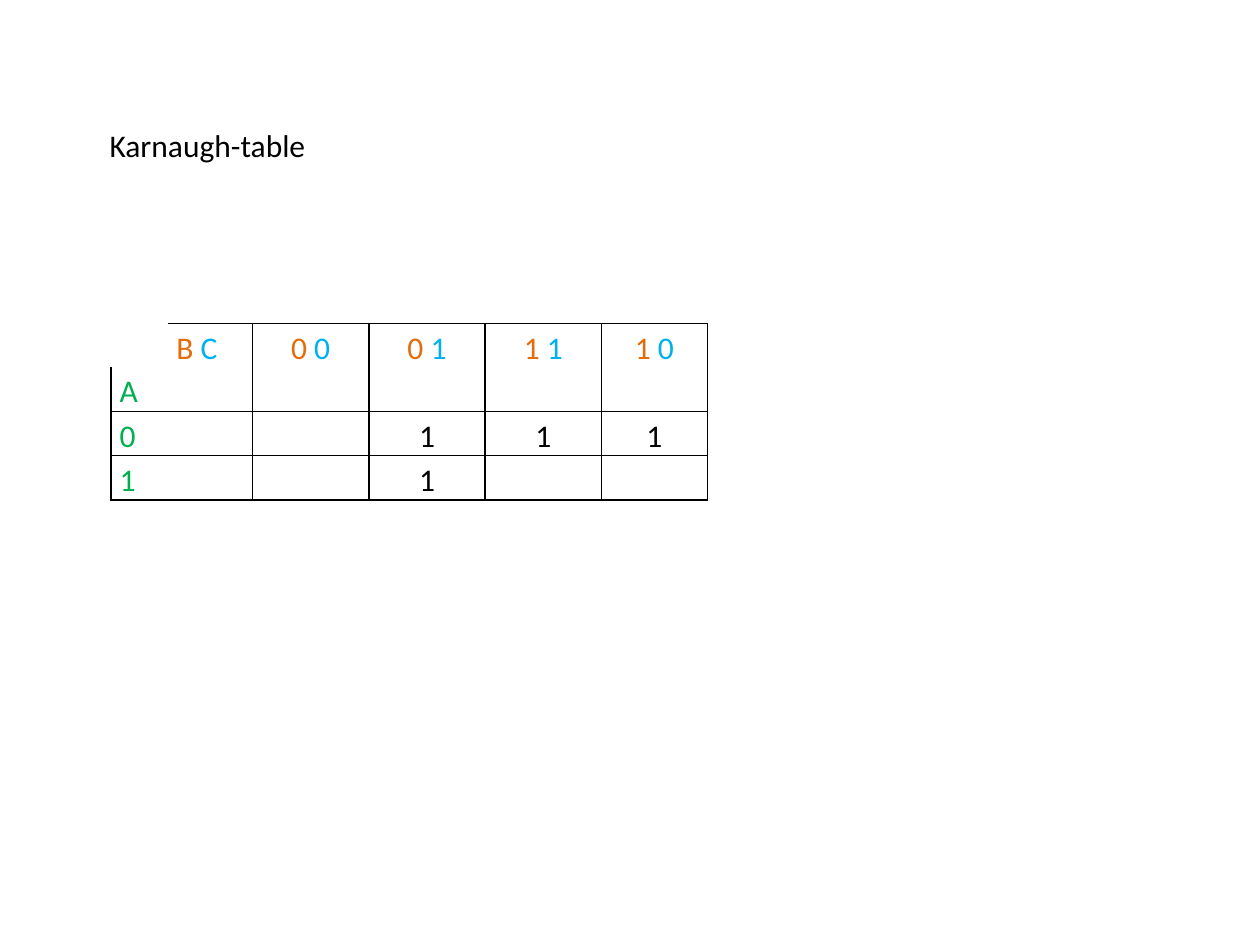
from dataclasses import dataclass

from lxml import etree
from pptx import Presentation
from pptx.dml.color import RGBColor
from pptx.enum.text import MSO_ANCHOR, MSO_AUTO_SIZE, PP_ALIGN
from pptx.oxml.ns import qn
from pptx.util import Pt

LEFT, CENTER = PP_ALIGN.LEFT, PP_ALIGN.CENTER
TOP, MIDDLE = MSO_ANCHOR.TOP, MSO_ANCHOR.MIDDLE
NO_FIT = MSO_AUTO_SIZE.NONE


@dataclass(frozen=True)
class Theme:
    font: str = "Calibri"
    size: float = 18
    ink: str = "000000"
    a: str = "00B050"
    b: str = "E46C0A"
    c: str = "00B0F0"
    line: float = 1
    pad: float = 5
    lead: float = 1.15


@dataclass(frozen=True)
class Entry:
    row: int
    col: int
    runs: tuple[tuple[str, str], ...]
    align: PP_ALIGN = CENTER
    anchor: MSO_ANCHOR = TOP


THEME = Theme()
WIDTHS = (32.4, 48.5, 66.5, 66.5, 66.5, 60.5, 64)
HEIGHTS = (24.8, 24.8, 24.8, 24.8, 49.8)
LAST_ROW, LAST_COL = len(HEIGHTS) - 1, len(WIDTHS) - 1
CODES = ("00", "01", "11", "10")
ONES = ((2, 3), (2, 4), (2, 5), (3, 3))


def style(para, align: PP_ALIGN) -> None:
    para.alignment = align
    para.font.name = THEME.font
    para.font.size = Pt(THEME.size)


def sides(row: int, col: int) -> str:
    """Name the ruled sides (L, R, T, B) of a cell."""
    if row == LAST_ROW:
        return "T" if col < LAST_COL else ""
    if col == LAST_COL:
        return "L"
    if col == 0 and row < 2:
        return "LB" if row else ""
    if col == 1 and row < 2:
        return "TRB"
    return "LRTB"


def rule(cell, ruled: str) -> None:
    props = cell._tc.get_or_add_tcPr()
    for at, side in enumerate("LRTB"):
        line = etree.Element(qn(f"a:ln{side}"), w=str(Pt(THEME.line)))
        if side in ruled:
            fill = etree.SubElement(line, qn("a:solidFill"))
            etree.SubElement(fill, qn("a:srgbClr"), val=THEME.ink)
        else:
            etree.SubElement(line, qn("a:noFill"))
        props.insert(at, line)


def write(table, entry: Entry) -> None:
    cell = table.cell(entry.row, entry.col)
    cell.vertical_anchor = entry.anchor
    para = cell.text_frame.paragraphs[0]
    style(para, entry.align)
    para.line_spacing = THEME.lead
    for text, color in entry.runs:
        run = para.add_run()
        run.text = text
        run.font.color.rgb = RGBColor.from_string(color)


def add_grid(slide):
    frame = slide.shapes.add_table(
        len(HEIGHTS), len(WIDTHS), Pt(63.4), Pt(185),
        Pt(sum(WIDTHS)), Pt(sum(HEIGHTS)))
    table = frame.table
    table.first_row = table.horz_banding = False
    for col, width in zip(table.columns, WIDTHS):
        col.width = Pt(width)
    for row, height in zip(table.rows, HEIGHTS):
        row.height = Pt(height)
    for r in range(len(HEIGHTS)):
        for c in range(len(WIDTHS)):
            cell = table.cell(r, c)
            cell.fill.background()
            cell.margin_left = cell.margin_right = Pt(THEME.pad)
            cell.margin_top = cell.margin_bottom = 0
            rule(cell, sides(r, c))
    # Headings span two rows, row labels span two columns
    for c in range(1, LAST_COL):
        table.cell(0, c).merge(table.cell(1, c))
    for r in range(2, len(HEIGHTS)):
        table.cell(r, 0).merge(table.cell(r, 1))
    return table


def pair(first: str, second: str) -> tuple[tuple[str, str], ...]:
    return (f"{first} ", THEME.b), (second, THEME.c)


def main() -> None:
    deck = Presentation()
    deck.slide_width, deck.slide_height = Pt(720), Pt(540)
    slide = deck.slides.add_slide(deck.slide_layouts[5])

    # Title
    title = slide.shapes.title
    title.left, title.top = Pt(55.4), Pt(68.4)
    title.width, title.height = Pt(395.3), Pt(51)
    text = title.text_frame
    text.text = "Karnaugh-table"
    text.word_wrap = True
    text.auto_size = NO_FIT
    text.vertical_anchor = TOP
    para = text.paragraphs[0]
    style(para, LEFT)
    para.font.color.rgb = RGBColor.from_string(THEME.ink)

    # Table: column codes, row labels, then the ones
    entries = [Entry(0, 1, pair("B", "C"), LEFT)]
    entries += [Entry(0, c, pair(*code)) for c, code in enumerate(CODES, 2)]
    entries += [Entry(r, 0, ((label, THEME.a),), LEFT)
                for r, label in enumerate("A01", 1)]
    entries += [Entry(r, c, (("1", THEME.ink),), CENTER, MIDDLE)
                for r, c in ONES]
    table = add_grid(slide)
    for entry in entries:
        write(table, entry)

    deck.save("out.pptx")


if __name__ == "__main__":
    main()
